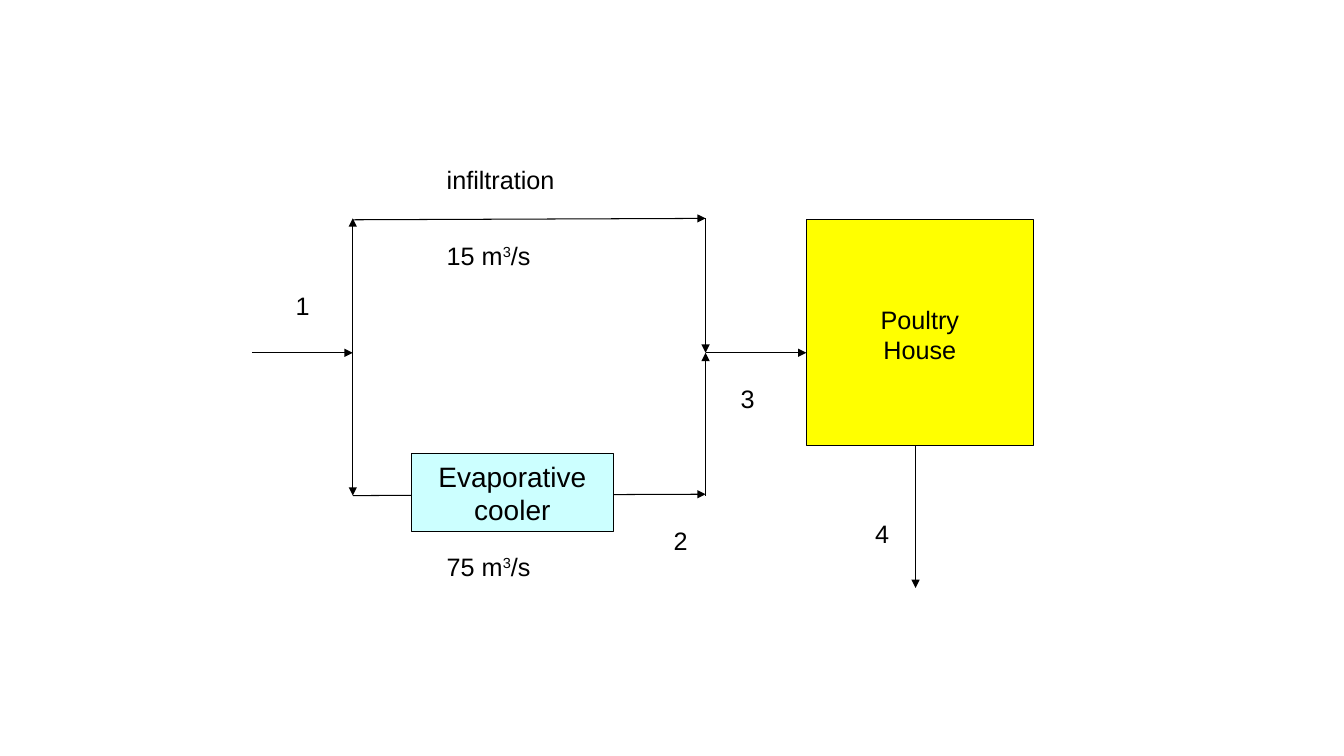
from pptx import Presentation
from pptx.dml.color import RGBColor
from pptx.enum.shapes import MSO_CONNECTOR, MSO_SHAPE
from pptx.enum.text import MSO_ANCHOR, PP_ALIGN
from pptx.oxml.ns import qn
from pptx.util import Pt
from lxml.etree import SubElement


def color(value):
    return RGBColor.from_string(value)


class FlowDiagram:
    """Draws the boxes, labels and arrows of an air flow diagram."""

    font_name = "Arial"
    ink = "000000"
    line_width = 0.75

    def __init__(self, slide):
        self.slide = slide

    def add_text(self, shape, text, size, alignment):
        frame = shape.text_frame
        frame.word_wrap = True
        paragraph = frame.paragraphs[0]
        paragraph.alignment = alignment
        for index, part in enumerate(text.split("^")):
            run = paragraph.add_run()
            run.text = part
            if index == 1:
                run.font._element.set("baseline", "30000")
        paragraph.font.name = self.font_name
        paragraph.font.size = Pt(size)
        paragraph.font.color.rgb = color(self.ink)

    def label(self, text, left, top, width, height=29, alignment=PP_ALIGN.LEFT):
        box = self.slide.shapes.add_textbox(Pt(left), Pt(top), Pt(width), Pt(height))
        self.add_text(box, text, 18, alignment)

    def box(self, left, top, width, height, fill, text="", size=20):
        shape = self.slide.shapes.add_shape(
            MSO_SHAPE.RECTANGLE, Pt(left), Pt(top), Pt(width), Pt(height)
        )
        shape.shadow.inherit = False
        shape.fill.solid()
        shape.fill.fore_color.rgb = color(fill)
        shape.line.color.rgb = color(self.ink)
        shape.line.width = Pt(self.line_width)
        if text:
            shape.text_frame.vertical_anchor = MSO_ANCHOR.MIDDLE
            self.add_text(shape, text, size, PP_ALIGN.CENTER)

    def arrow(self, start, end):
        connector = self.slide.shapes.add_connector(
            MSO_CONNECTOR.STRAIGHT, *(Pt(length) for length in (*start, *end))
        )
        connector.line.color.rgb = color(self.ink)
        connector.line.width = Pt(self.line_width)
        line = connector.line._get_or_add_ln()
        SubElement(line, qn("a:tailEnd"), type="triangle")
        SubElement(connector._element.spPr, qn("a:effectLst"))


def main():
    presentation = Presentation()
    presentation.slide_width, presentation.slide_height = Pt(960), Pt(540)
    diagram = FlowDiagram(presentation.slides.add_slide(presentation.slide_layouts[6]))

    split, merge, house = 252, 504, 576
    top, middle, bottom = 156, 252, 354
    arrows = [
        ((180, middle), (split, middle)),
        ((split, middle), (split, top)),
        ((split, middle), (split, bottom)),
        ((split, top + 1), (merge, top)),
        ((split, bottom), (merge, bottom - 1)),
        ((merge, top), (merge, middle)),
        ((merge, bottom), (merge, middle)),
        ((merge, middle), (house, middle)),
        ((654, 288), (654, 420)),
    ]
    for start, end in arrows:
        diagram.arrow(start, end)

    diagram.box(294, 324, 144, 56, "CCFFFF", "Evaporative cooler")
    diagram.box(house, 157, 162, 161, "FFFF00")
    diagram.label("Poultry House", 612, 214, 90, 50, PP_ALIGN.CENTER)

    labels = [
        ("infiltration", 312, 114, 144),
        ("15 m^3^/s", 312, 168, 96),
        ("75 m^3^/s", 312, 390, 96),
        ("1", 204, 204, 54),
        ("2", 474, 372, 54),
        ("3", 522, 270, 54),
        ("4", 618, 367, 54),
    ]
    for label in labels:
        diagram.label(*label)

    presentation.save("out.pptx")


if __name__ == "__main__":
    main()
